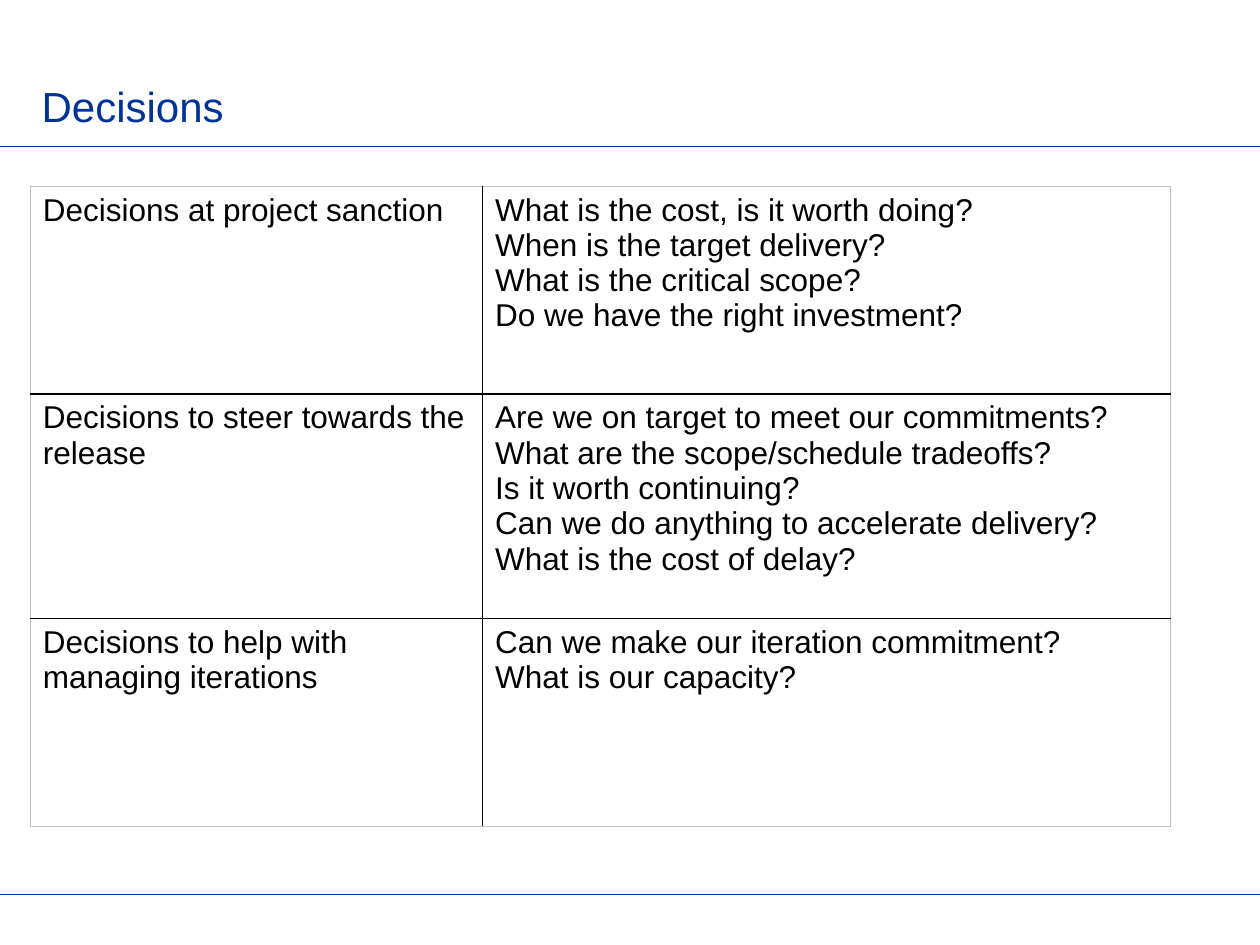
"""Build the Decisions slide: a title, two rules and a table of questions."""
from typing import NamedTuple

from lxml import etree
from pptx import Presentation
from pptx import util as u
from pptx.dml.color import RGBColor
from pptx.enum import shapes, text
from pptx.oxml.ns import qn

WIDTH, HEIGHT = u.Inches(10), u.Inches(7.5)
FONT, BLUE, BLACK, GREY, WHITE = "Arial", "003399", "000000", "BFBFBF", "FFFFFF"
COLUMNS = (0.359, 0.546)


class Decision(NamedTuple):
    topic: str
    questions: tuple[str, ...]
    height: float


DECISIONS = (
    Decision("Decisions at project sanction", (
        "What is the cost, is it worth doing?",
        "When is the target delivery?",
        "What is the critical scope?",
        "Do we have the right investment?",
    ), 0.22),
    Decision("Decisions to steer towards the release", (
        "Are we on target to meet our commitments?",
        "What are the scope/schedule tradeoffs?",
        "Is it worth continuing?",
        "Can we do anything to accelerate delivery?",
        "What is the cost of delay?",
    ), 0.2375),
    Decision("Decisions to help with managing iterations", (
        "Can we make our iteration commitment?",
        "What is our capacity?",
    ), 0.22),
)


def across(share: float) -> int:
    return round(WIDTH * share)


def down(share: float) -> int:
    return round(HEIGHT * share)


def color(value: str) -> RGBColor:
    return RGBColor.from_string(value)


def format_text(frame, size: float, value: str) -> None:
    for para in frame.paragraphs:
        para.alignment = text.PP_ALIGN.LEFT
        for span in para.runs:
            span.font.name, span.font.size = FONT, u.Pt(size)
            span.font.color.rgb = color(value)


def add_title(page, words: str) -> None:
    box = page.shapes.title
    box.left, box.top = across(0.023), down(0.02)
    box.width, box.height = across(0.828), down(0.125)
    box.text_frame.text = words
    box.text_frame.vertical_anchor = text.MSO_ANCHOR.BOTTOM
    format_text(box.text_frame, 24, BLUE)


def add_rule(page, share: float) -> None:
    rule = page.shapes.add_connector(
        shapes.MSO_CONNECTOR.STRAIGHT, 0, down(share), WIDTH, down(share))
    rule.line.color.rgb, rule.line.width = color(BLUE), u.Pt(0.5)
    etree.SubElement(rule.element.spPr, qn("a:effectLst"))


def set_border(cell, side: str, outer: bool) -> None:
    width = u.Pt(0.5 if outer else 1)
    edge = etree.Element(qn(f"a:ln{side}"), w=str(width))
    fill = etree.SubElement(edge, qn("a:solidFill"))
    etree.SubElement(fill, qn("a:srgbClr"), val=GREY if outer else BLACK)
    cell.fill.solid()
    cell.fill.fore_color.rgb = color(WHITE)
    properties = cell._tc.get_or_add_tcPr()
    properties.insert(len(properties) - 1, edge)


def add_decisions(page, decisions: tuple[Decision, ...]) -> None:
    last_row, last_column = len(decisions) - 1, len(COLUMNS) - 1
    table = page.shapes.add_table(
        len(decisions), len(COLUMNS), across(0.024), down(0.197),
        across(sum(COLUMNS)), down(sum(d.height for d in decisions))).table
    table.first_row = table.horz_banding = False
    for column, share in zip(table.columns, COLUMNS):
        column.width = across(share)
    for r, decision in enumerate(decisions):
        table.rows[r].height = down(decision.height)
        for c, words in enumerate((decision.topic, "\n".join(decision.questions))):
            cell = table.cell(r, c)
            cell.text_frame.text = words
            format_text(cell.text_frame, 18, BLACK)
            outer = {"L": c == 0, "R": c == last_column, "T": r == 0, "B": r == last_row}
            for side, is_outer in outer.items():
                set_border(cell, side, is_outer)


def main() -> None:
    deck = Presentation()
    deck.slide_width, deck.slide_height = WIDTH, HEIGHT
    page = deck.slides.add_slide(deck.slide_layouts.get_by_name("Title Only"))
    for share in (0.155, 0.947):
        add_rule(page, share)
    add_title(page, "Decisions")
    add_decisions(page, DECISIONS)
    deck.save("out.pptx")


if __name__ == "__main__":
    main()
